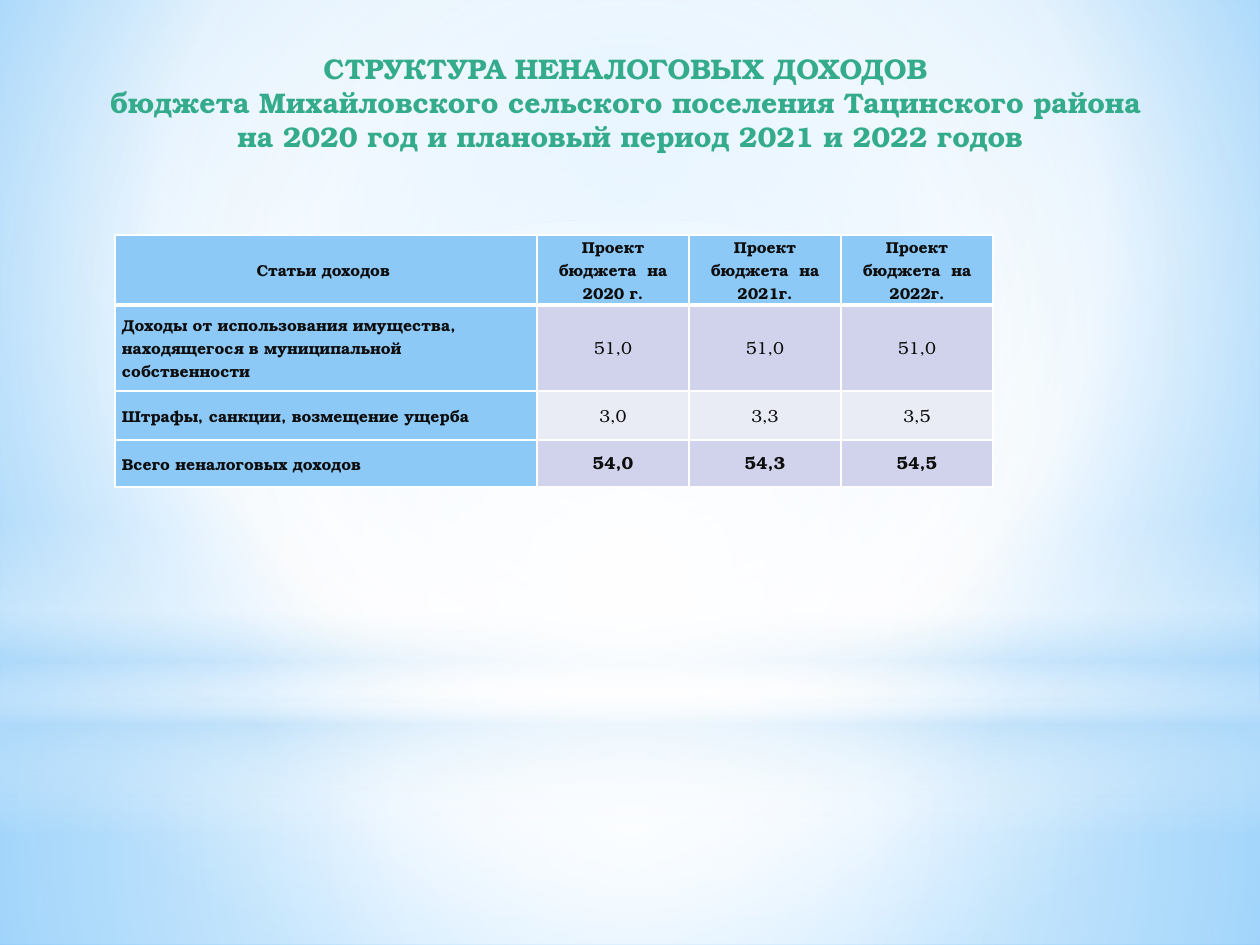
import dataclasses
import typing

import lxml.etree
import pptx
import pptx.dml.color
import pptx.enum.shapes
import pptx.enum.text
import pptx.oxml
import pptx.oxml.ns
import pptx.util

SCALE = 914400 / 126  # EMU in one px
FONT = "TeX Gyre Bonum"
HEX = {
    "title": "34AC8B", "ink": "0D0D0D", "head": "8CC9F7",
    "dark": "D0D3EB", "light": "E9EBF5", "white": "FFFFFF",
    "haze": "B4DCFA", "sky": "9ED5FF", "deep": "5BB9FF",
}
SHAPES = pptx.enum.shapes.MSO_SHAPE
ALIGN = pptx.enum.text.PP_ALIGN
ANCHOR = pptx.enum.text.MSO_ANCHOR
MID = (50, 50, 50, 50)


class Stop(typing.NamedTuple):
    at: int
    hue: str
    alpha: int = 100


@dataclasses.dataclass
class Glow:
    kind: typing.Any
    top: int
    high: int
    stops: list[Stop]
    focus: typing.Optional[tuple] = MID  # None means a vertical blend


@dataclasses.dataclass
class Row:
    high: int
    texts: list[str]
    fill: str
    size: int
    bold: bool


GLOWS = [
    Glow(SHAPES.RECTANGLE, 703, 242,
         [Stop(0, "white", 91), Stop(37, "white", 76), Stop(100, "haze", 79)]),
    Glow(SHAPES.RECTANGLE, 0, 703,
         [Stop(0, "white", 89), Stop(48, "white", 62), Stop(100, "haze", 79)]),
    Glow(SHAPES.RECTANGLE, 519, 315,
         [Stop(0, "white", 0), Stop(29, "white", 30), Stop(45, "haze", 40),
          Stop(55, "white", 26), Stop(65, "haze", 60), Stop(100, "white", 0)], None),
    Glow(SHAPES.OVAL, 220, 703, [Stop(0, "white"), Stop(56, "white", 0)]),
]
TITLE = ("СТРУКТУРА НЕНАЛОГОВЫХ ДОХОДОВ \v"
         "бюджета Михайловского сельского поселения Тацинского района \v"
         "на 2020 год и плановый период 2021 и 2022 годов")
COLS = [422, 152, 152, 152]
ROWS = [
    Row(70, ["Статьи доходов ", "Проект бюджета  на 2020 г.",
             "Проект бюджета  на 2021г.", "Проект бюджета  на 2022г."], "head", 9, True),
    Row(86, ["Доходы от использования имущества, находящегося в муниципальной собственности",
             "51,0", "51,0", "51,0"], "dark", 10, False),
    Row(49, ["Штрафы, санкции, возмещение ущерба", "3,0", "3,3", "3,5"], "light", 10, False),
    Row(47, ["Всего неналоговых доходов", "54,0", "54,3", "54,5"], "dark", 10, True),
]


def px(num: float) -> int:
    return round(num * SCALE)


def color(name: str) -> pptx.dml.color.RGBColor:
    return pptx.dml.color.RGBColor.from_string(HEX[name])


def apply(item: typing.Any, form: dict) -> None:
    for key, value in form.items():
        setattr(item, key, value)


def blend(host: typing.Any, stops: list[Stop], focus: typing.Optional[tuple]) -> None:
    """Swap the empty fill inside host for a gradient."""
    marks = "".join(
        f'<a:gs pos="{s.at * 1000}"><a:srgbClr val="{HEX[s.hue]}">'
        f'<a:alpha val="{s.alpha * 1000}"/></a:srgbClr></a:gs>' for s in stops)
    if focus:
        sides = " ".join(f'{k}="{v * 1000}"' for k, v in zip("ltrb", focus))
        way = f'<a:path path="circle"><a:fillToRect {sides}/></a:path>'
    else:
        way = '<a:lin ang="5400000" scaled="0"/>'
    grad = pptx.oxml.parse_xml(
        f'<a:gradFill {pptx.oxml.ns.nsdecls("a")} rotWithShape="1">'
        f'<a:gsLst>{marks}</a:gsLst>{way}</a:gradFill>')
    void = host.find(".//" + pptx.oxml.ns.qn("a:noFill"))
    void.getparent().replace(void, grad)


def shine(slide: typing.Any, glow: Glow) -> None:
    shape = slide.shapes.add_shape(glow.kind, 0, px(glow.top), px(1260), px(glow.high))
    shape.shadow.inherit = False
    shape.fill.background()
    blend(shape.element, glow.stops, glow.focus)
    shape.line.fill.background()


def write(frame: typing.Any, text: str, align: typing.Any, gap: float,
          size: float, bold: bool, hue: str) -> None:
    para = frame.paragraphs[0]
    para.text = text
    apply(para, {"alignment": align, "line_spacing": pptx.util.Pt(gap)})
    for run in para.runs:
        apply(run.font, {"name": FONT, "size": pptx.util.Pt(size), "bold": bold})
        run.font.color.rgb = color(hue)


def edge(cell: typing.Any, sides: dict[str, int]) -> None:
    props = cell._tc.get_or_add_tcPr()
    for side, wide in sides.items():
        line = lxml.etree.SubElement(props, pptx.oxml.ns.qn("a:ln" + side), w=str(wide * 12700))
        fill = lxml.etree.SubElement(line, pptx.oxml.ns.qn("a:solidFill"))
        lxml.etree.SubElement(fill, pptx.oxml.ns.qn("a:srgbClr"), val=HEX["white"])


def grid(slide: typing.Any) -> None:
    high = sum(row.high for row in ROWS)
    table = slide.shapes.add_table(len(ROWS), len(COLS), px(115), px(235),
                                   px(sum(COLS)), px(high)).table
    for col, wide in zip(table.columns, COLS):
        col.width = px(wide)
    form = {"margin_left": px(7), "margin_right": px(7), "margin_top": 0,
            "margin_bottom": 0, "vertical_anchor": ANCHOR.MIDDLE}
    for r, row in enumerate(ROWS):
        table.rows[r].height = px(row.high)
        for c, text in enumerate(row.texts):
            cell = table.cell(r, c)
            apply(cell, form)
            # The rule under the header is thicker
            edge(cell, {"L": 1, "R": 1, "T": 3 if r == 1 else 1, "B": 3 if r == 0 else 1})
            cell.fill.solid()
            cell.fill.fore_color.rgb = color(row.fill if c else "head")
            align = ALIGN.CENTER if c or r == 0 else ALIGN.LEFT
            write(cell.text_frame, text, align, 13.1,
                  row.size if c else 9, row.bold or c == 0, "ink")


def main() -> None:
    deck = pptx.Presentation()
    apply(deck, {"slide_width": px(1260), "slide_height": px(945)})
    slide = deck.slides.add_slide(deck.slide_layouts[6])

    # Backdrop
    slide.background.fill.background()
    blend(slide.element, [Stop(0, "sky"), Stop(60, "white"), Stop(100, "deep")],
          (20, 10, 20, 60))
    for glow in GLOWS:
        shine(slide, glow)

    # Title
    frame = slide.shapes.add_textbox(px(63), px(45), px(1134), px(144)).text_frame
    apply(frame, {"word_wrap": True, "vertical_anchor": ANCHOR.TOP})
    write(frame, TITLE, ALIGN.CENTER, 19.4, 16.2, True, "title")

    # Income table
    grid(slide)
    deck.save("out.pptx")


if __name__ == "__main__":
    main()
